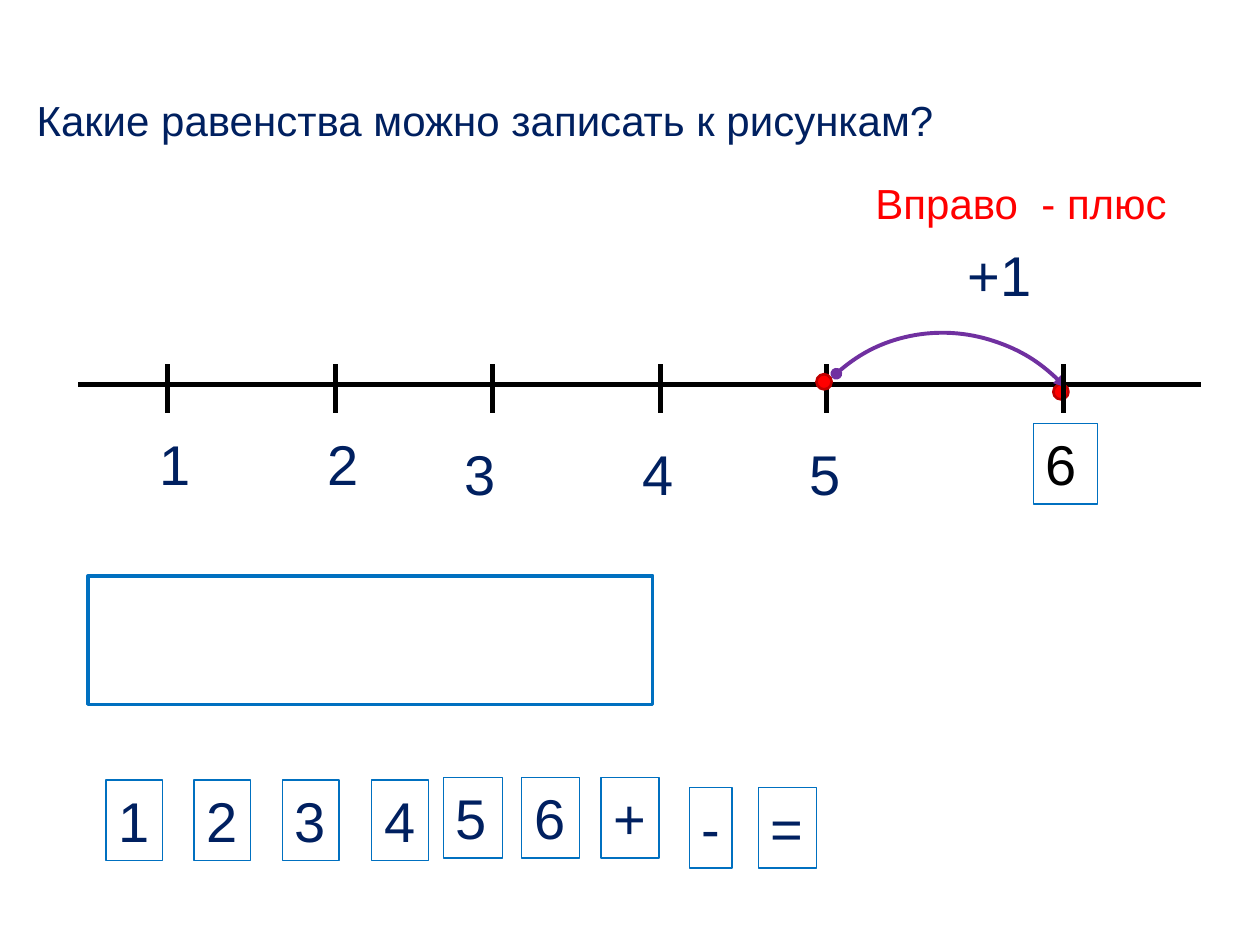
from lxml import etree
from pptx import Presentation
from pptx.dml.color import RGBColor
from pptx.enum.shapes import MSO_CONNECTOR, MSO_SHAPE
from pptx.enum.text import MSO_ANCHOR, MSO_AUTO_SIZE, PP_ALIGN
from pptx.oxml.ns import qn
from pptx.util import Pt

PX = 9144
NAVY = RGBColor(0x00, 0x20, 0x60)
BLUE = RGBColor(0x00, 0x70, 0xC0)
RED = RGBColor(0xFF, 0x00, 0x00)
WINE = RGBColor(0xC0, 0x00, 0x00)
PLUM = RGBColor(0x70, 0x30, 0xA0)
BLACK = RGBColor(0x00, 0x00, 0x00)
RECT, ARC, DOT = MSO_SHAPE.RECTANGLE, MSO_SHAPE.ARC, MSO_SHAPE.FLOWCHART_CONNECTOR
STRAIGHT = MSO_CONNECTOR.STRAIGHT
LEFT, TOP = PP_ALIGN.LEFT, MSO_ANCHOR.TOP
GROW = MSO_AUTO_SIZE.SHAPE_TO_FIT_TEXT


def scale(*nums):
    """Turn px into EMU."""
    return [n * PX for n in nums]


def write(shape, text, size=32, color=NAVY):
    """Put formatted text into a shape."""
    frame = shape.text_frame
    frame.word_wrap = True
    frame.auto_size = GROW
    frame.vertical_anchor = TOP
    para = frame.paragraphs[0]
    para.text = text
    para.alignment = LEFT
    font = para.font
    font.name, font.size, font.color.rgb = "Arial", Pt(size), color


def label(slide, text, box, **style):
    """Add a plain text box."""
    write(slide.shapes.add_textbox(*scale(*box)), text, **style)


def form(slide, kind, box, line, width, fill=None):
    """Add an outlined preset shape."""
    shape = slide.shapes.add_shape(kind, *scale(*box))
    shape.shadow.inherit = False
    if fill is None:
        shape.fill.background()
    else:
        shape.fill.solid()
        shape.fill.fore_color.rgb = fill
    shape.line.color.rgb = line
    shape.line.width = Pt(width)
    return shape


def card(slide, text, box, **style):
    """Add a framed sign."""
    write(form(slide, RECT, box, BLUE, 0.75), text, **style)


def rule(slide, *ends):
    """Draw a black straight line."""
    line = slide.shapes.add_connector(STRAIGHT, *scale(*ends))
    line.line.color.rgb = BLACK
    line.line.width = Pt(3)
    etree.SubElement(line._element.spPr, qn("a:effectLst"))


def jump(slide, box):
    """Draw the arc of one step to the right."""
    arc = form(slide, ARC, box, PLUM, 2.25)
    arc.rotation = 317.4
    ln = arc.line._get_or_add_ln()
    for tag, kind in (("a:headEnd", "oval"), ("a:tailEnd", "triangle")):
        etree.SubElement(ln, qn(tag), type=kind)


def axis(slide, box):
    """Build the number line with its step from 5 to 6."""
    x, y, w, h = box
    rule(slide, x, y + 16, x + w, y + 16)
    ticks = (71, 204, 329, 462, 594)
    for tick in ticks:
        rule(slide, x + tick, y, x + tick, y + h)
    for left, top in ((586, 8), (774, 16)):
        form(slide, DOT, (x + left, y + top, 12, 12), WINE, 1.5, RED)
    jump(slide, (x + 564, y - 27, 253, 262))
    rule(slide, x + 782, y, x + 782, y + h)
    spots = ((55, 47), (188, 47), (297, 55), (438, 55), (571, 55))
    for num, (left, top) in enumerate(spots, 1):
        label(slide, str(num), (x + left, y + top, 39, 64))
    card(slide, "6", (x + 758, y + 47, 51, 64), color=BLACK)
    label(slide, "+1", (x + 696, y - 103, 104, 64))


def deck(slide, box):
    """Lay out the row of sign cards."""
    x, y = box
    signs = (
        ("1", 0, 2, 45), ("2", 70, 2, 45), ("3", 140, 2, 45),
        ("4", 211, 2, 45), ("5", 268, 0, 47), ("6", 330, 0, 46),
        ("+", 393, 0, 46), ("-", 463, 8, 34), ("=", 518, 8, 46),
    )
    for text, left, top, width in signs:
        card(slide, text, (x + left, y + top, width, 64))


def head(slide, box):
    """Set the title and the hint below it."""
    x, y, w, h = box
    title = slide.shapes.title
    title.left, title.top, title.width, title.height = scale(*box)
    write(title, "Какие равенства можно записать к рисункам?", size=24)
    label(slide, "Вправо  - плюс", (x + 666, y + 66, 287, h), size=24, color=RED)


def main():
    """Build and save the slide."""
    prs = Presentation()
    prs.slide_width, prs.slide_height = scale(1000, 750)
    slide = prs.slides.add_slide(prs.slide_layouts[5])
    head(slide, (19, 70, 954, 50))
    axis(slide, (62, 289, 891, 39))
    form(slide, RECT, (70, 457, 448, 102), BLUE, 2)
    deck(slide, (84, 617))
    prs.save("out.pptx")


if __name__ == "__main__":
    main()
